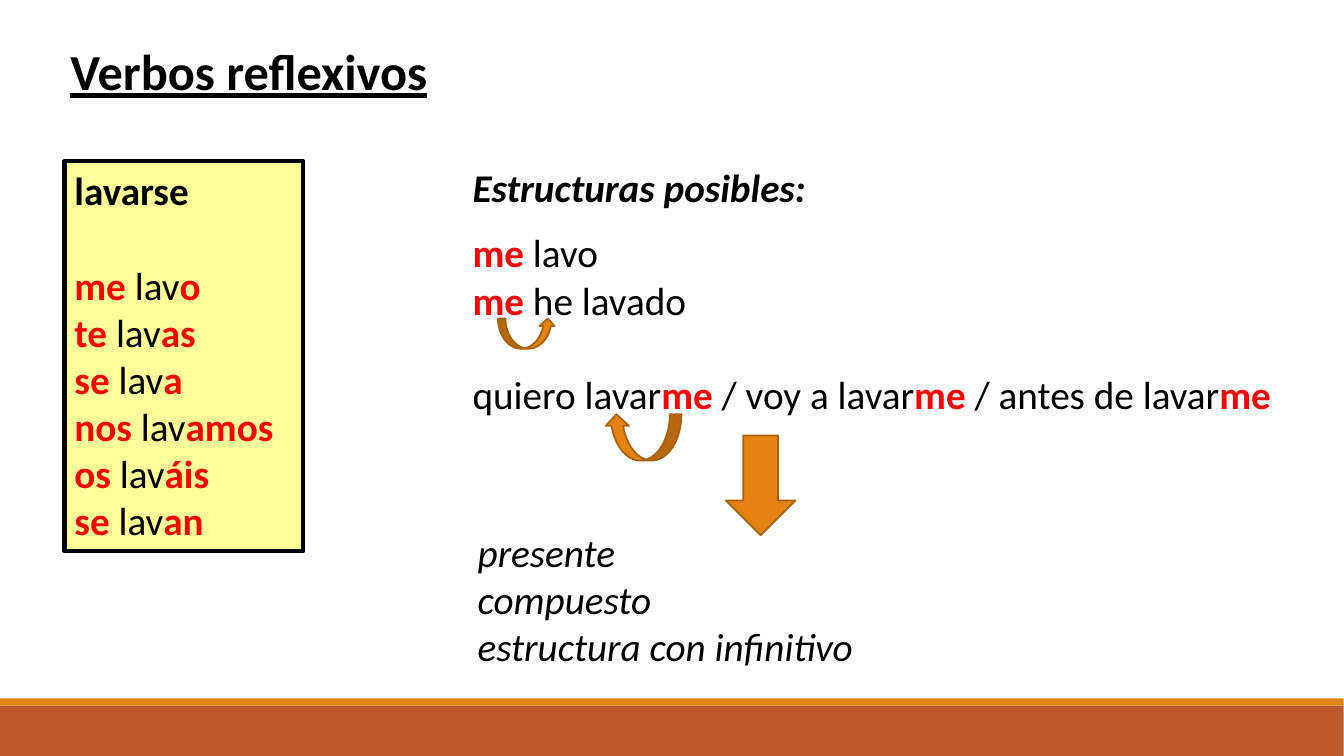
"""Build a Spanish grammar slide about reflexive verbs."""
from pptx import Presentation
from pptx.dml.color import RGBColor
from pptx.enum import shapes, text
from pptx.util import Inches, Pt

BLACK = RGBColor(0x00, 0x00, 0x00)
RED = RGBColor(0xFF, 0x00, 0x00)
YELLOW = RGBColor(0xFF, 0xFF, 0x99)
ORANGE = RGBColor(0xE4, 0x83, 0x12)
DARK_ORANGE = RGBColor(0xA9, 0x61, 0x0D)
RUST = RGBColor(0xBD, 0x58, 0x2C)
SHAPE = shapes.MSO_SHAPE


def add_text(box, lines, size=28, bold=False, italic=False, underline=False, gap_before=None):
    """Add a text box; parts between asterisks are red and bold."""
    textbox = slide.shapes.add_textbox(*map(Inches, box))
    frame = textbox.text_frame
    frame.word_wrap = True
    frame.auto_size = text.MSO_AUTO_SIZE.NONE
    for index, line in enumerate(lines):
        paragraph = frame.add_paragraph() if index else frame.paragraphs[0]
        if index == gap_before:
            paragraph.space_before = Pt(34)
        for position, part in enumerate(line.split("*")):
            if not part:
                continue
            marked = position % 2 == 1
            run = paragraph.add_run()
            run.text = part
            run.font.name = "Calibri"
            run.font.size = Pt(size)
            run.font.bold = bold or marked
            run.font.italic = italic
            run.font.underline = underline
            run.font.color.rgb = RED if marked else BLACK
    return textbox


def add_filled(kind, box, fill, outline=None):
    """Add a flat preset shape with an optional outline."""
    shape = slide.shapes.add_shape(kind, *map(Inches, box))
    shape.shadow.inherit = False
    shape.fill.solid()
    shape.fill.fore_color.rgb = fill
    if outline is None:
        shape.line.fill.background()
    else:
        shape.line.color.rgb = outline
        shape.line.width = Pt(1.25)
    return shape


deck = Presentation()
deck.slide_width = Inches(13.333)
deck.slide_height = Inches(7.5)
slide = deck.slides.add_slide(deck.slide_layouts[6])

add_filled(SHAPE.RECTANGLE, (0, 7, 13.33, 0.5), RUST)
add_filled(SHAPE.RECTANGLE, (0, 6.93, 13.33, 0.07), ORANGE)

add_text((0.6, 0.35, 4.99, 0.71), ["Verbos reflexivos"], size=36, bold=True, underline=True)

endings = [("me", "o"), ("te", "as"), ("se", "a"), ("nos", "amos"), ("os", "áis"), ("se", "an")]
forms = [f"*{pronoun}* lav*{ending}*" for pronoun, ending in endings]
conjugation = add_text((0.64, 1.6, 2.37, 3.87), ["lavarse"] + forms, gap_before=1)
conjugation.text_frame.paragraphs[0].runs[0].font.bold = True
conjugation.fill.solid()
conjugation.fill.fore_color.rgb = YELLOW
conjugation.line.color.rgb = BLACK
conjugation.line.width = Pt(3)

add_text((4.59, 1.57, 5.42, 0.57), ["Estructuras posibles:"], bold=True, italic=True)
examples = [
    "*me* lavo",
    "*me* he lavado",
    "quiero lavar*me* / voy a lavar*me* / antes de lavar*me*",
]
add_text((4.59, 2.22, 8.52, 1.99), examples, gap_before=2)
add_filled(SHAPE.DOWN_ARROW, (7.2, 4.32, 0.69, 0.99), ORANGE, DARK_ORANGE)
add_text((4.64, 5.19, 8.52, 1.51), ["presente", "compuesto", "estructura con infinitivo"], italic=True)

add_filled(SHAPE.CURVED_UP_ARROW, (4.94, 3.16, 0.57, 0.3), ORANGE, DARK_ORANGE)
infinitive_arrow = add_filled(SHAPE.CURVED_LEFT_ARROW, (6.15, 3.96, 0.46, 0.76), ORANGE, DARK_ORANGE)
infinitive_arrow.rotation = 90

deck.save("out.pptx")
